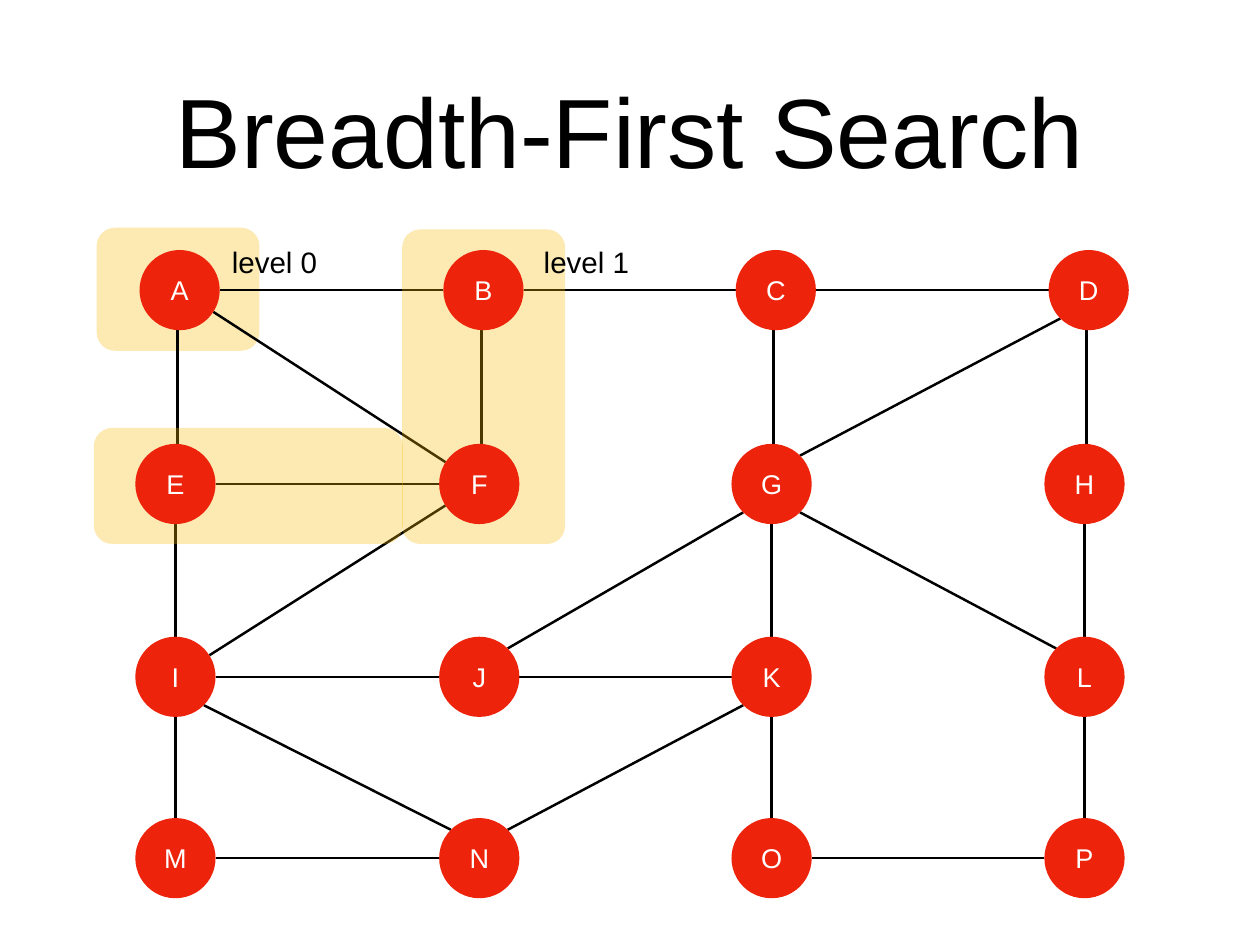
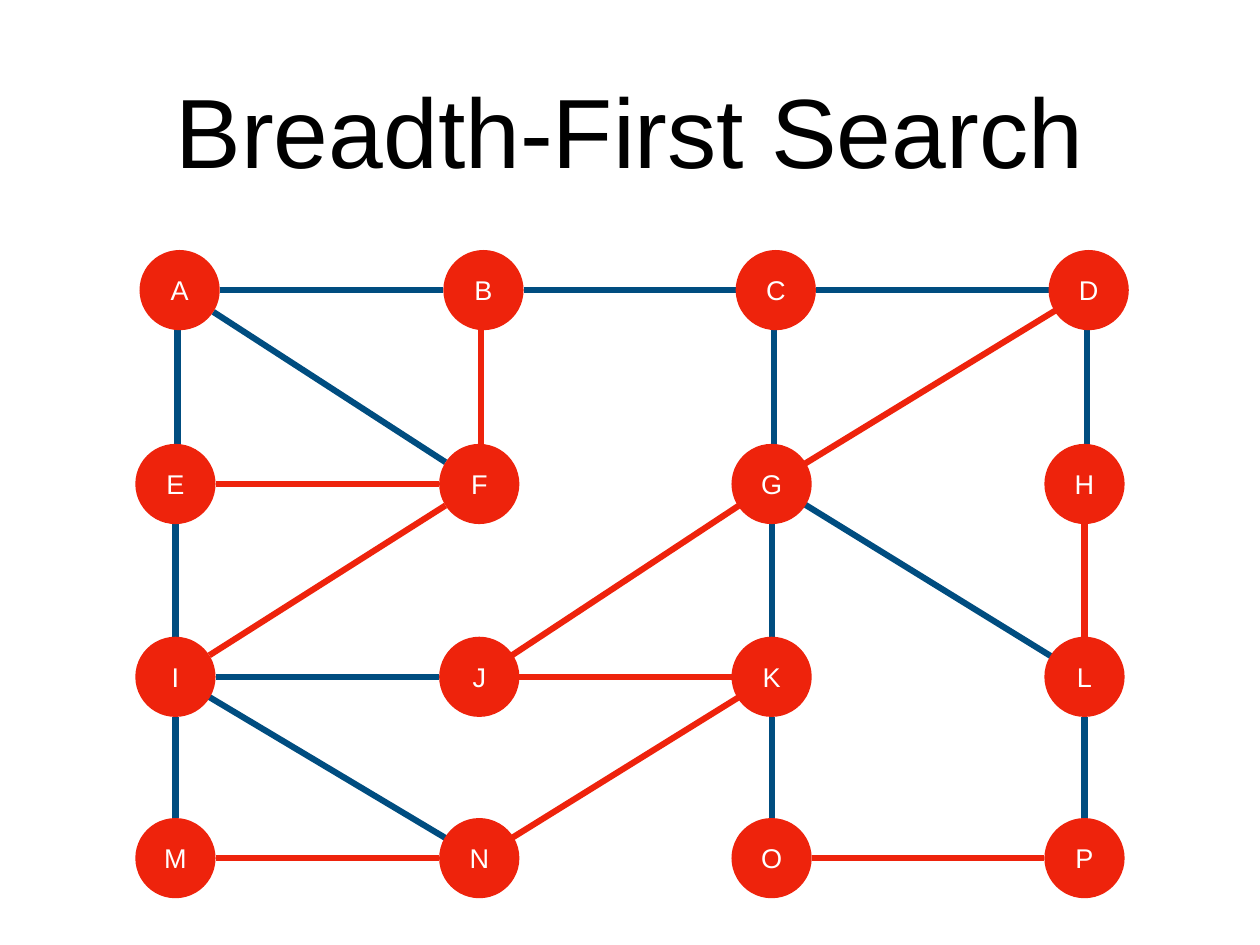
"""Build two breadth-first search slides: the levels found so far, and the search tree."""
from math import hypot

from pptx import Presentation
from pptx.dml.color import RGBColor
from pptx.enum.shapes import MSO_CONNECTOR, MSO_SHAPE
from pptx.enum.text import MSO_ANCHOR, MSO_AUTO_SIZE, PP_ALIGN
from pptx.oxml.ns import qn
from pptx.util import Cm, Pt
from lxml.etree import SubElement

TITLE = "Breadth-First Search"
FONT = "Arial"
BLACK, WHITE, RED, BLUE, GOLD = "000000", "FFFFFF", "EE230C", "004D80", "F7BA01"

ROWS = ["ABCD", "EFGH", "IJKL", "MNOP"]
COLUMN_X = [5.03, 13.74, 22.12, 31.09]
ROW_Y = [8.32, 13.88, 19.41, 24.61]
TOP_ROW_SHIFT = 0.12
DIAMETER = 2.3

TREE_EDGES = "AB BC CD AE AF EI IM CG GK KO DH LP IJ IN GL".split()
CROSS_EDGES = "BF EF IF JG GD JK HL NK MN OP".split()

LABEL_SIZE = (3.2, 1.27)
LEVEL_0 = ("level 0", (6.27, 6.86), [(2.77, 6.53, 4.67, 3.53, 0.15)])
LEVEL_1 = ("level 1", (15.21, 6.86),
           [(11.53, 6.58, 4.67, 9.02, 0.11), (2.69, 12.27, 8.86, 3.33, 0.16)])

CENTERS = {name: (x + (TOP_ROW_SHIFT if row == 0 else 0), y)
           for row, (names, y) in enumerate(zip(ROWS, ROW_Y))
           for name, x in zip(names, COLUMN_X)}


def rgb(color):
    return RGBColor.from_string(color)


def write(sp, text, size, color):
    tf = sp.text_frame
    tf.margin_left = tf.margin_right = tf.margin_top = tf.margin_bottom = Cm(0.15)
    tf.vertical_anchor = MSO_ANCHOR.MIDDLE
    p = tf.paragraphs[0]
    p.alignment = PP_ALIGN.CENTER
    r = p.add_run()
    r.text = text
    r.font.name, r.font.size, r.font.color.rgb = FONT, Pt(size), rgb(color)
    return tf


def add_filled(shapes, kind, box, color):
    sp = shapes.add_shape(kind, *map(Cm, box))
    sp.shadow.inherit = False
    sp.fill.solid()
    sp.fill.fore_color.rgb = rgb(color)
    sp.line.fill.background()
    return sp


def add_titled_slide(prs):
    s = prs.slides.add_slide(prs.slide_layouts[5])
    title = s.shapes.title
    title.left, title.top, title.width, title.height = map(Cm, (2.64, 0.71, 30.84, 5.99))
    write(title, TITLE, 80, BLACK).auto_size = MSO_AUTO_SIZE.NONE
    return s


def add_areas(s, areas):
    shapes = s.shapes.add_group_shape().shapes if len(areas) > 1 else s.shapes
    for *box, rounding in areas:
        sp = add_filled(shapes, MSO_SHAPE.ROUNDED_RECTANGLE, box, GOLD)
        sp.adjustments[0] = rounding
        color = sp.fill._xPr.find(qn("a:solidFill"))[0]
        SubElement(color, qn("a:alpha")).set("val", "30000")


def add_label(s, text, corner):
    sp = s.shapes.add_textbox(*map(Cm, corner + LABEL_SIZE))
    tf = write(sp, text, 24, BLACK)
    tf.word_wrap = False
    tf.auto_size = MSO_AUTO_SIZE.NONE


def edge_ends(edge, corners):
    """Return x1, y1, x2, y2 of an edge, level or upright within a row or column."""
    (x1, y1), (x2, y2) = (CENTERS[name] for name in edge)
    dx, dy = x2 - x1, y2 - y1
    upright = abs(dx) < 1
    if upright:
        x1 = x2 = (x1 + x2) / 2
        dx = 0
    if upright or dy == 0 or "F" in edge:
        scale = DIAMETER / 2 / hypot(dx, dy)
        ox, oy = dx * scale, dy * scale
    else:
        ox = DIAMETER / 2 * 0.5 ** 0.5 if corners else 0
        oy = ox if dy > 0 else -ox
    return x1 + ox, y1 + oy, x2 - ox, y2 - oy


def add_edges(s, edges, color, width, corners=False):
    for edge in edges:
        ends = map(Cm, edge_ends(edge, corners))
        line = s.shapes.add_connector(MSO_CONNECTOR.STRAIGHT, *ends)
        line.line.color.rgb, line.line.width = rgb(color), Pt(width)
        SubElement(line._element.spPr, qn("a:effectLst"))


def add_nodes(s):
    for name, (x, y) in CENTERS.items():
        box = (x - DIAMETER / 2, y - DIAMETER / 2, DIAMETER, DIAMETER)
        write(add_filled(s.shapes, MSO_SHAPE.OVAL, box, RED), name, 22, WHITE)


def add_levels_slide(prs):
    s = add_titled_slide(prs)
    (label_0, corner_0, areas_0), (label_1, corner_1, areas_1) = LEVEL_0, LEVEL_1
    add_areas(s, areas_0)
    add_edges(s, TREE_EDGES + CROSS_EDGES, BLACK, 2, corners=True)
    add_label(s, label_0, corner_0)
    add_areas(s, areas_1)
    add_label(s, label_1, corner_1)
    add_nodes(s)


def add_tree_slide(prs):
    s = add_titled_slide(prs)
    add_edges(s, TREE_EDGES, BLUE, 5)
    add_edges(s, CROSS_EDGES, RED, 5)
    add_nodes(s)


def main():
    prs = Presentation()
    prs.slide_width, prs.slide_height = Cm(36.12), Cm(27.1)
    add_levels_slide(prs)
    add_tree_slide(prs)
    prs.save("out.pptx")


if __name__ == "__main__":
    main()
